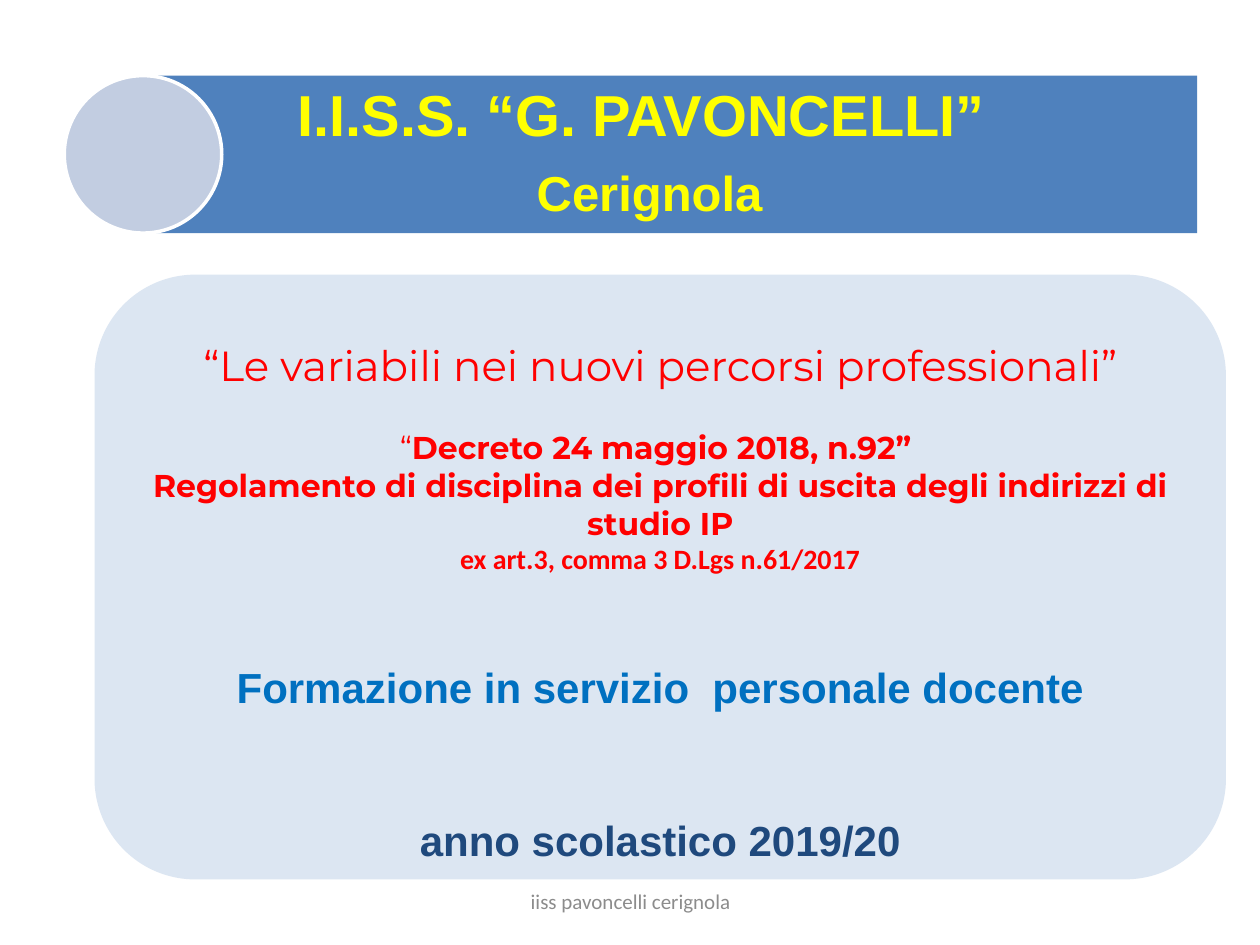
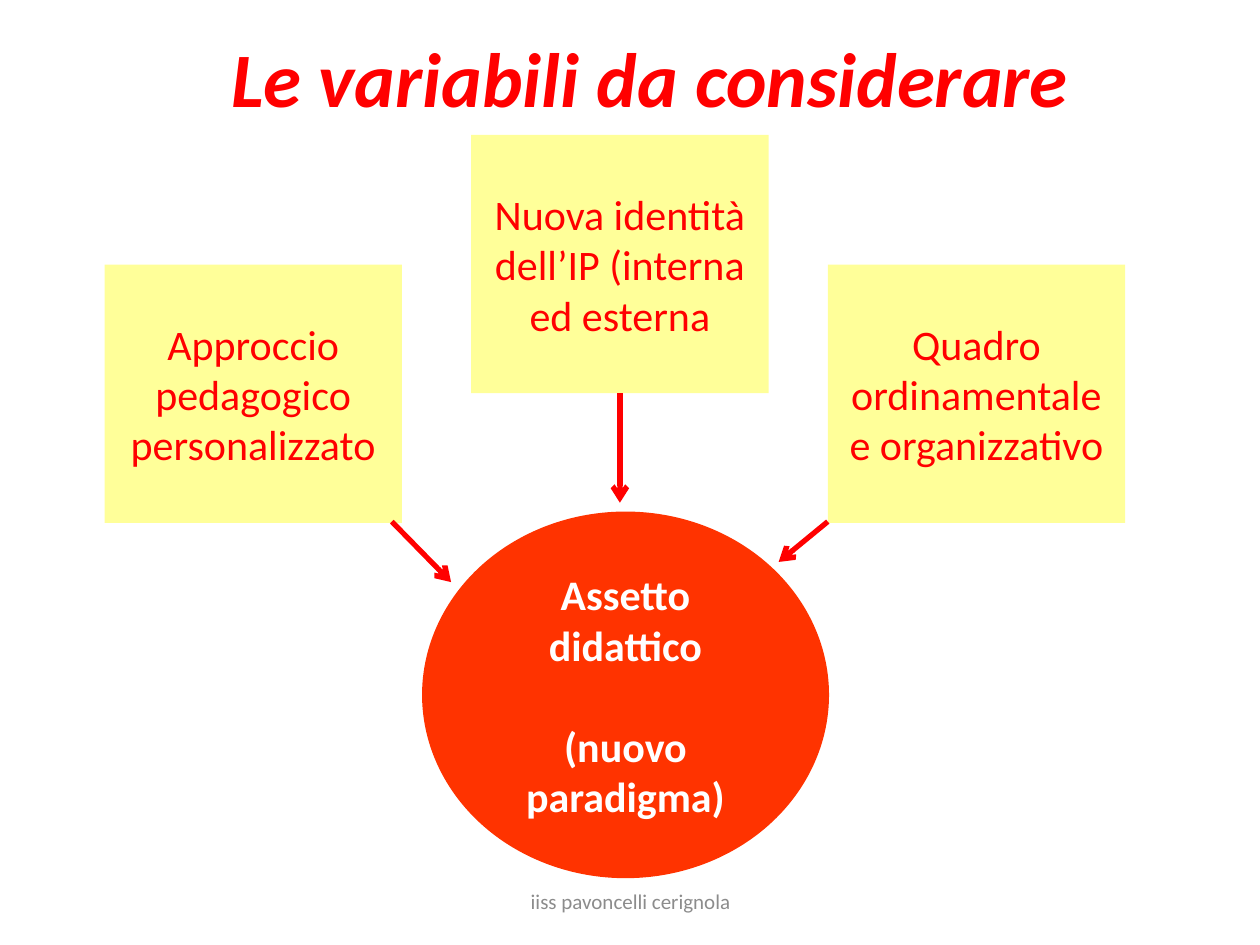
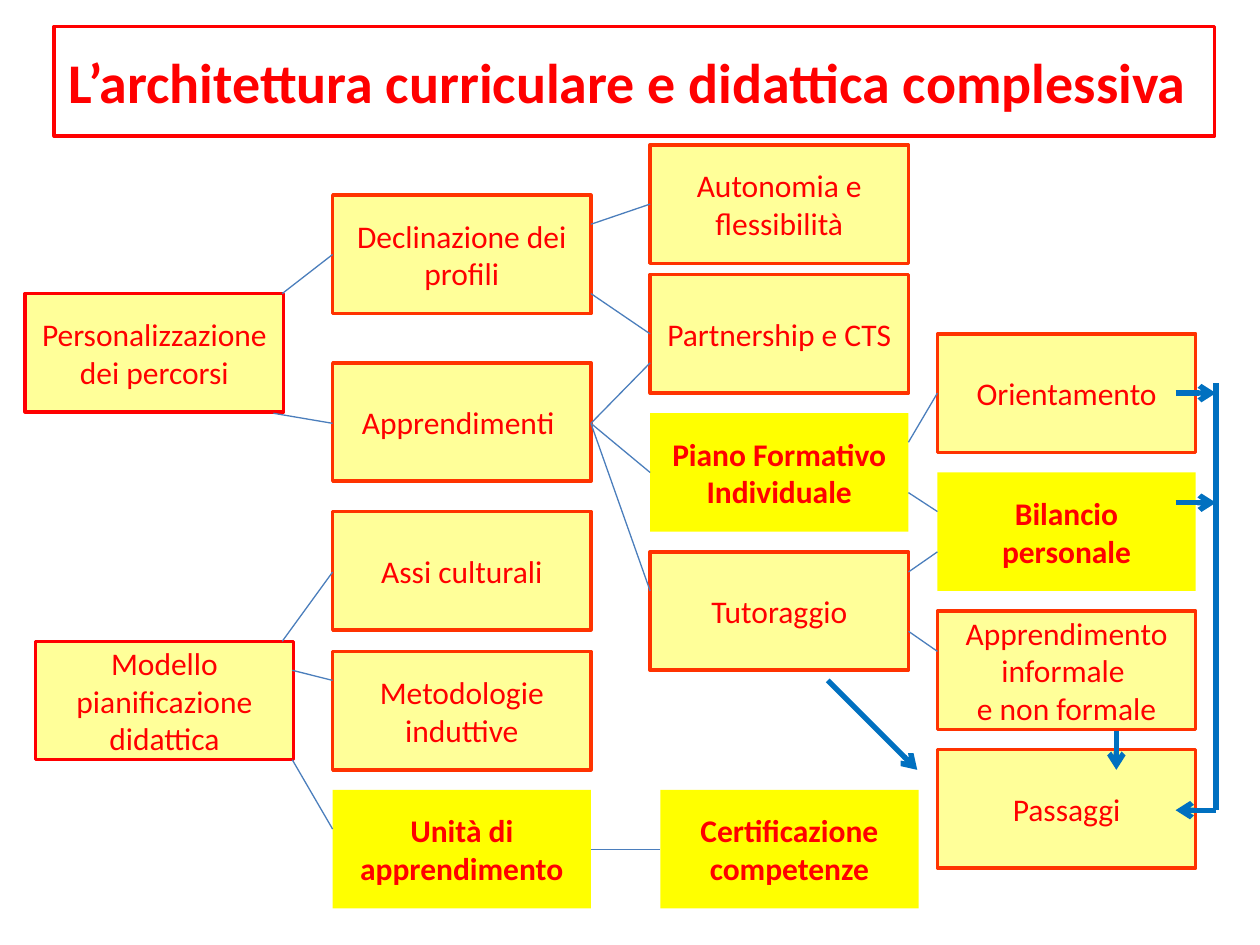
from lxml import etree
from pptx import Presentation
from pptx.dml.color import RGBColor
from pptx.enum.shapes import MSO_CONNECTOR, MSO_SHAPE
from pptx.enum.text import MSO_ANCHOR, MSO_AUTO_SIZE, PP_ALIGN
from pptx.oxml.ns import qn
from pptx.util import Inches, Pt

WHITE = RGBColor(0xFF, 0xFF, 0xFF)
RED = RGBColor(0xFF, 0x00, 0x00)
ORANGE_RED = RGBColor(0xFF, 0x33, 0x00)
YELLOW = RGBColor(0xFF, 0xFF, 0x00)
PALE_YELLOW = RGBColor(0xFF, 0xFF, 0x99)
BAND_BLUE = RGBColor(0x4F, 0x81, 0xBD)
CIRCLE_BLUE = RGBColor(0xC2, 0xCD, 0xE1)
PANEL_BLUE = RGBColor(0xDC, 0xE6, 0xF2)
LINK_BLUE = RGBColor(0x4B, 0x7E, 0xBC)
ARROW_BLUE = RGBColor(0x00, 0x70, 0xC0)
NAVY = RGBColor(0x1F, 0x49, 0x7D)
GREY = RGBColor(0x8C, 0x8C, 0x8C)

RECTANGLE = MSO_SHAPE.RECTANGLE
OVAL = MSO_SHAPE.OVAL
ROUNDED = MSO_SHAPE.ROUNDED_RECTANGLE
PENTAGON = MSO_SHAPE.PENTAGON
STRAIGHT = MSO_CONNECTOR.STRAIGHT
CENTER = PP_ALIGN.CENTER
MIDDLE = MSO_ANCHOR.MIDDLE
TOP = MSO_ANCHOR.TOP
NO_AUTOFIT = MSO_AUTO_SIZE.NONE

TITLE_ONLY_LAYOUT = 5
FOOTER = "iiss pavoncelli cerignola"
BOX_WIDTH, BOX_HEIGHT = 2.05, 0.94
COLUMN_2, COLUMN_3, COLUMN_4 = 2.64, 5.16, 7.44


def text_format(size, color=RED, name="Calibri", bold=False, italic=False):
    return {"size": Pt(size), "name": name, "bold": bold, "italic": italic, "color": color}


def format_font(font, values):
    for attribute, value in values.items():
        if attribute == "color":
            font.color.rgb = value
        else:
            setattr(font, attribute, value)


def write_text(shape, paragraphs, anchor=MIDDLE):
    """Each paragraph is (runs, spacing); each run is (text, format)."""
    frame = shape.text_frame
    frame.word_wrap = True
    frame.auto_size = NO_AUTOFIT
    frame.vertical_anchor = anchor
    for index, (runs, spacing) in enumerate(paragraphs):
        paragraph = frame.paragraphs[0] if index == 0 else frame.add_paragraph()
        paragraph.alignment = CENTER
        for attribute, value in spacing.items():
            setattr(paragraph, attribute, value)
        for text, values in runs:
            run = paragraph.add_run()
            run.text = text
            format_font(run.font, values)


def write_lines(shape, text, values):
    write_text(shape, [([(line, values)], {}) for line in text.split("\n")])


def style_shape(shape, fill, line=None, line_width=2):
    shape.fill.solid()
    shape.fill.fore_color.rgb = fill
    if line is None:
        shape.line.fill.background()
    else:
        shape.line.color.rgb = line
        shape.line.width = Pt(line_width)


def add_shape(slide, kind, place, fill, line=None):
    shape = slide.shapes.add_shape(kind, *map(Inches, place))
    shape.shadow.inherit = False
    style_shape(shape, fill, line)
    return shape


def add_line(slide, start, end, color, width, arrow=False):
    line = slide.shapes.add_connector(STRAIGHT, *map(Inches, start + end))
    line.line.color.rgb = color
    line.line.width = Pt(width)
    if arrow:
        etree.SubElement(line.line._get_or_add_ln(), qn("a:tailEnd"), type="arrow")
    etree.SubElement(line._element.spPr, qn("a:effectLst"))


def place_title(slide, place):
    title = slide.shapes.title
    title.left, title.top, title.width, title.height = map(Inches, place)
    return title


def add_footer(slide):
    footer = slide.shapes.add_textbox(*map(Inches, (3.42, 6.95, 3.17, 0.4)))
    write_lines(footer, FOOTER, text_format(12, GREY))


def build_cover(slide):
    band_place = (0.52, 0.6, 8.98, 1.25)
    title = place_title(slide, band_place)
    frame = title.text_frame
    margins = {"margin_left": 0.55, "margin_right": 0.26, "margin_top": 0.14, "margin_bottom": 0.14}
    for attribute, value in margins.items():
        setattr(frame, attribute, Inches(value))
    spacing = {"line_spacing": 0.9, "space_before": Pt(0), "space_after": Pt(12)}
    write_text(title, [
        ([("I.I.S.S. “G. PAVONCELLI” ", text_format(33, YELLOW, "Arial", True))], spacing),
        ([("Cerignola", text_format(28, YELLOW, "Arial", True))], spacing),
    ])
    band = add_shape(slide, PENTAGON, band_place, BAND_BLUE)
    band.rotation = 180
    title._element.addprevious(band._element)
    add_shape(slide, OVAL, (0.51, 0.6, 1.25, 1.25), CIRCLE_BLUE, WHITE)

    panel = add_shape(slide, ROUNDED, (0.75, 2.18, 8.98, 4.8), PANEL_BLUE)
    panel.text_frame.margin_top = Inches(0.28)
    decree = text_format(18, name="Montserrat", bold=True)
    write_text(panel, [
        ([("“Le variabili nei nuovi percorsi professionali”", text_format(24, name="Montserrat"))], {}),
        ([("“", text_format(18, name="Montserrat")), ("Decreto 24 maggio 2018, n.92” ", decree)],
         {"space_before": Pt(22)}),
        ([("Regolamento di disciplina dei profili di uscita degli indirizzi di studio IP", decree)], {}),
        ([("ex art.3, comma 3 D.Lgs n.61/2017", text_format(16, bold=True))], {}),
        ([("Formazione in servizio  personale docente", text_format(24, ARROW_BLUE, "Arial", True))],
         {"space_before": Pt(49)}),
        ([("anno scolastico 2019/20", text_format(24, NAVY, "Arial", True))],
         {"space_before": Pt(59)}),
    ], TOP)
    add_footer(slide)


def build_variables(slide):
    title = place_title(slide, (1.3, 0.29, 7.72, 0.63))
    style_shape(title, WHITE)
    write_lines(title, "Le variabili da considerare", text_format(44, bold=True, italic=True))

    variables = [
        (3.74, 1.07, "Nuova identità dell’IP (interna ed esterna"),
        (0.83, 2.1, "Approccio pedagogico\npersonalizzato"),
        (6.57, 2.1, "Quadro ordinamentale e organizzativo"),
    ]
    for left, top, text in variables:
        box = add_shape(slide, RECTANGLE, (left, top, 2.36, 2.05), PALE_YELLOW)
        write_lines(box, text, text_format(24))

    outcome = add_shape(slide, OVAL, (3.35, 4.06, 3.23, 2.91), ORANGE_RED)
    outcome_format = text_format(24, WHITE, bold=True)
    write_text(outcome, [
        ([("Assetto didattico", outcome_format)], {}),
        ([("(nuovo paradigma)", outcome_format)], {"space_before": Pt(29)}),
    ])
    arrows = [((4.92, 3.12), (4.92, 3.99)), ((3.11, 4.14), (3.58, 4.62)), ((6.57, 4.14), (6.18, 4.46))]
    for start, end in arrows:
        add_line(slide, start, end, RED, 3, arrow=True)
    add_footer(slide)


def add_topic(slide, left, top, text, line=ORANGE_RED, key=False):
    """A key topic is bright yellow, bold and without outline."""
    fill, line = (YELLOW, None) if key else (PALE_YELLOW, line)
    box = add_shape(slide, RECTANGLE, (left, top, BOX_WIDTH, BOX_HEIGHT), fill, line)
    write_lines(box, text, text_format(18, bold=key))


def build_architecture(slide):
    title = place_title(slide, (0.43, 0.21, 9.21, 0.87))
    style_shape(title, WHITE, RED)
    write_lines(title, "L’architettura curriculare e didattica complessiva ", text_format(32, bold=True))

    add_topic(slide, 0.2, 2.33, "Personalizzazione dei percorsi", RED)
    add_topic(slide, 0.28, 5.09, "Modello pianificazione didattica", RED)
    topics = [
        (COLUMN_2, 1.55, "Declinazione dei profili"),
        (COLUMN_2, 2.88, "Apprendimenti "),
        (COLUMN_2, 4.06, "Assi culturali"),
        (COLUMN_2, 5.17, "Metodologie induttive"),
        (COLUMN_3, 1.15, "Autonomia e flessibilità"),
        (COLUMN_3, 2.18, "Partnership e CTS"),
        (COLUMN_3, 4.38, "Tutoraggio"),
        (COLUMN_4, 2.65, "Orientamento"),
        (COLUMN_4, 4.85, "Apprendimento informale \ne non formale"),
        (COLUMN_4, 5.95, "Passaggi"),
    ]
    key_topics = [
        (COLUMN_2, 6.27, "Unità di apprendimento"),
        (COLUMN_3, 3.28, "Piano Formativo Individuale"),
        (5.24, 6.27, "Certificazione competenze"),
        (COLUMN_4, 3.75, "Bilancio personale"),
    ]
    for topic in topics:
        add_topic(slide, *topic)
    for topic in key_topics:
        add_topic(slide, *topic, key=True)

    root_links = [(2.24, 2.33, 2.02), (2.17, 3.28, 3.36), (2.24, 5.09, 4.54),
                  (2.32, 5.32, 5.4), (2.32, 6.03, 6.58)]
    for left, start_y, end_y in root_links:
        add_line(slide, (left, start_y), (COLUMN_2, end_y), LINK_BLUE, 0.75)
    column_links = [
        (COLUMN_2, COLUMN_3, [(1.78, 1.62), (2.33, 2.65), (3.36, 2.88), (3.36, 3.75), (3.36, 4.69)]),
        (COLUMN_2, 5.24, [(6.74, 6.74)]),
        (COLUMN_3, COLUMN_4, [(3.51, 3.12), (3.91, 4.06), (4.54, 4.38), (5.01, 5.17)]),
    ]
    for left, right, heights in column_links:
        for start_y, end_y in heights:
            add_line(slide, (left + BOX_WIDTH, start_y), (right, end_y), LINK_BLUE, 0.75)

    add_line(slide, (9.65, 3.04), (9.65, 6.43), ARROW_BLUE, 3)
    arrows = [((6.57, 5.4), (7.28, 6.11)), ((9.65, 6.43), (9.33, 6.43)), ((8.86, 5.8), (8.86, 6.11)),
              ((9.33, 3.12), (9.65, 3.12)), ((9.33, 3.99), (9.65, 3.99))]
    for start, end in arrows:
        add_line(slide, start, end, ARROW_BLUE, 3, arrow=True)


def main():
    presentation = Presentation()
    presentation.slide_width = Inches(10)
    presentation.slide_height = Inches(7.5)
    layout = presentation.slide_layouts[TITLE_ONLY_LAYOUT]
    for build in (build_cover, build_variables, build_architecture):
        build(presentation.slides.add_slide(layout))
    presentation.save("out.pptx")


if __name__ == "__main__":
    main()
